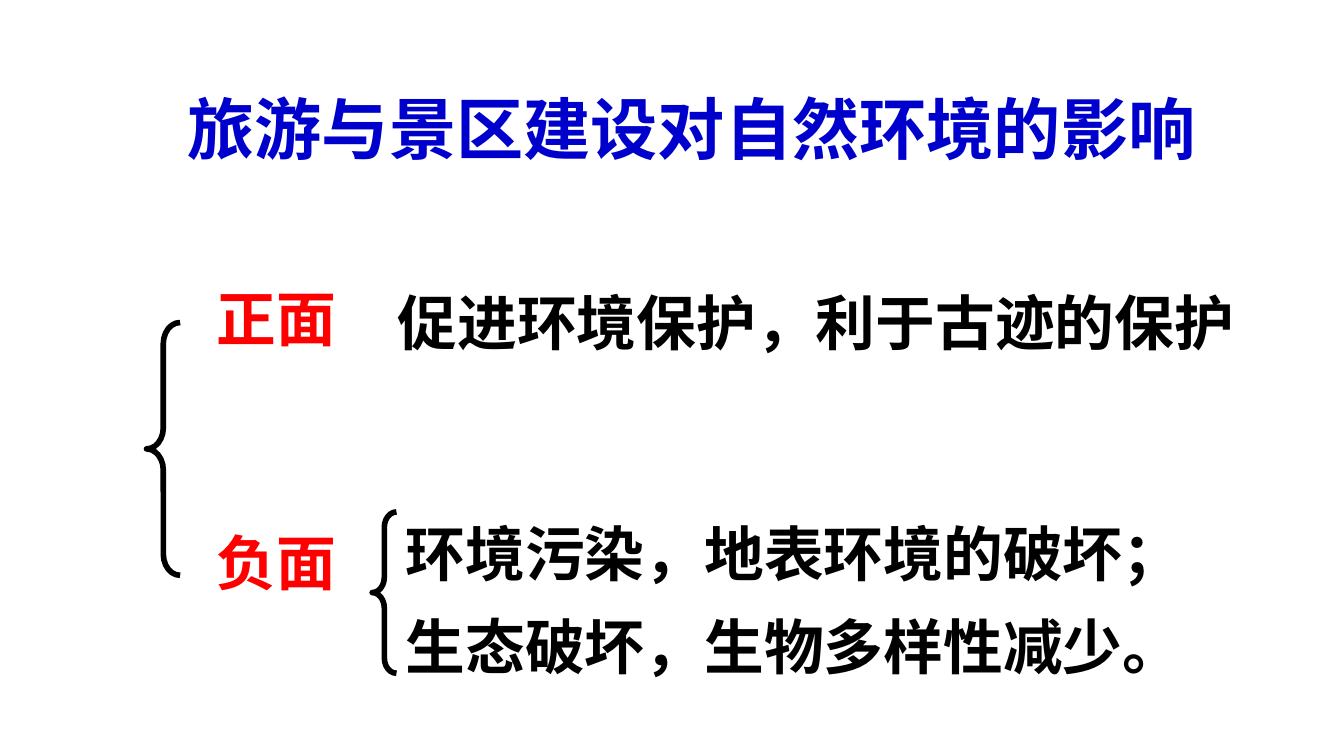
"""Build a slide on how tourism and scenic-area construction affect nature."""
import pptx
import pptx.dml.color
import pptx.enum.shapes
import pptx.enum.text
import pptx.util
import lxml.etree

Pt = pptx.util.Pt
Align = pptx.enum.text.PP_ALIGN
Anchor = pptx.enum.text.MSO_ANCHOR
CHINESE_FONT = "Noto Sans CJK SC"


def color(value):
    return pptx.dml.color.RGBColor.from_string(value)


def add_text(lines, left, top, width, height, size=32, fill="000000", font=CHINESE_FONT,
             align=Align.CENTER, anchor=Anchor.TOP, spacing=None, margin_left=7.2):
    box = slide.shapes.add_textbox(Pt(left), Pt(top), Pt(width), Pt(height))
    frame = box.text_frame
    frame.word_wrap = True
    frame.auto_size = pptx.enum.text.MSO_AUTO_SIZE.SHAPE_TO_FIT_TEXT
    frame.vertical_anchor = anchor
    frame.margin_left = Pt(margin_left)
    frame.text = lines
    for paragraph in frame.paragraphs:
        paragraph.alignment = align
        paragraph.line_spacing = spacing
        for run in paragraph.runs:
            run.font.name = font
            run.font.size = Pt(size)
            run.font.bold = True
            run.font.color.rgb = color(fill)
            latin = run.font._element.find(pptx.oxml.ns.qn("a:latin"))
            east_asian = lxml.etree.Element(pptx.oxml.ns.qn("a:ea"), typeface=CHINESE_FONT)
            latin.addnext(east_asian)


presentation = pptx.Presentation()
presentation.slide_width = Pt(720)
presentation.slide_height = Pt(405)
slide = presentation.slides.add_slide(presentation.slide_layouts[6])

add_text("旅游与景区建设对自然环境的影响", 52.6, 43.2, 635.8, 50.4, size=36, fill="0000CC")

for label, top in (("正面", 147.6), ("负面", 277.9)):
    add_text(label, 93.6, top, 109.4, 46, fill="FF0000")

add_text("促进环境保护，利于古迹的保护", 205.9, 149.8, 476.6, 46, font="Arial", align=Align.LEFT)
add_text("环境污染，地表环境的破坏；\n生态破坏，生物多样性减少。", 148.3, 261.4, 540, 108,
         anchor=Anchor.MIDDLE, spacing=1.3, margin_left=21.6)

for left, top, width, height in ((78.5, 172.8, 18, 135.4), (199.4, 274.3, 13, 86.4)):
    brace = slide.shapes.add_shape(pptx.enum.shapes.MSO_SHAPE.LEFT_BRACE,
                                   Pt(left), Pt(top), Pt(width), Pt(height))
    brace.shadow.inherit = False
    brace.adjustments[0] = 0.625
    brace.fill.background()
    brace.line.color.rgb = color("000000")
    brace.line.width = Pt(3)

presentation.save("out.pptx")
